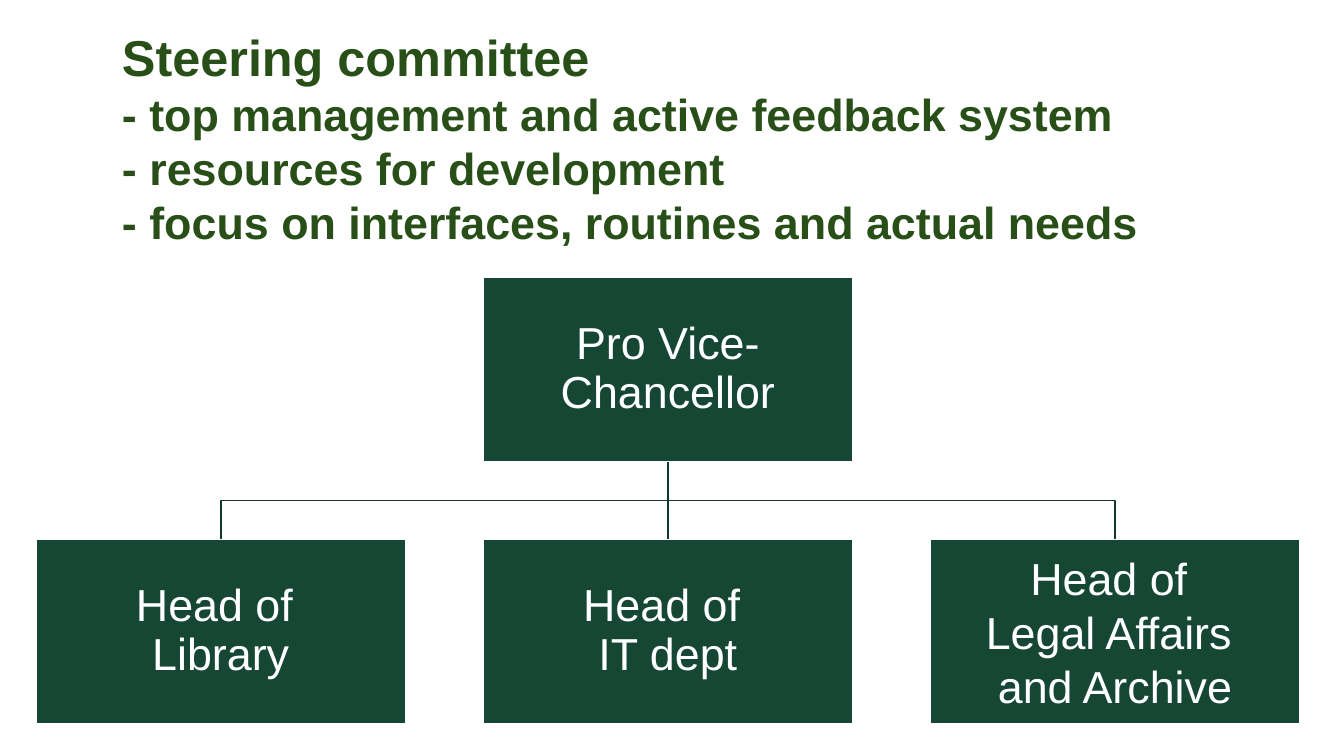
from dataclasses import dataclass

from lxml import etree
from pptx import Presentation
from pptx.dml.color import RGBColor
from pptx.enum.shapes import MSO_CONNECTOR, MSO_SHAPE
from pptx.enum.text import MSO_ANCHOR, MSO_AUTO_SIZE, PP_ALIGN
from pptx.oxml.ns import qn
from pptx.util import Inches, Pt

RECTANGLE = MSO_SHAPE.RECTANGLE
STRAIGHT = MSO_CONNECTOR.STRAIGHT
TOP, MIDDLE = MSO_ANCHOR.TOP, MSO_ANCHOR.MIDDLE
LEFT, CENTER = PP_ALIGN.LEFT, PP_ALIGN.CENTER
NO_AUTOFIT = MSO_AUTO_SIZE.NONE
TITLE_ONLY = 5


@dataclass(frozen=True)
class Theme:
    """Colours, font and type sizes of the slide."""

    heading: RGBColor = RGBColor(0x28, 0x4F, 0x18)
    role_fill: RGBColor = RGBColor(0x15, 0x47, 0x34)
    branch: RGBColor = RGBColor(0x11, 0x39, 0x2A)
    white: RGBColor = RGBColor(0xFF, 0xFF, 0xFF)
    font: str = "Arial"
    heading_size: int = 36
    body_size: int = 32
    line_width: int = 1


THEME = Theme()

HEADING = [
    "Steering committee",
    "- top management and active feedback system",
    "- resources for development",
    "- focus on interfaces, routines and actual needs",
]
CHAIR = (["Pro Vice-Chancellor"], 0.9)
MEMBERS = [
    (["Head of ", "Library"], 0.9),
    (["Head of ", "IT dept"], 0.9),
    (["Head of ", "Legal Affairs ", "and Archive"], 1.0),
]


def apply(target, values):
    """Set each attribute of the target from a dict."""
    for name, value in values.items():
        setattr(target, name, value)


def write_lines(frame, lines, sizes, color, bold, spacing, align, anchor, inset):
    """Fill a text frame with one paragraph for each line."""
    margins = ("margin_left", "margin_top", "margin_right", "margin_bottom")
    apply(frame, dict.fromkeys(margins, Inches(inset)))
    apply(frame, {"word_wrap": True, "auto_size": NO_AUTOFIT, "vertical_anchor": anchor})
    for index, (line, size) in enumerate(zip(lines, sizes)):
        paragraph = frame.add_paragraph() if index else frame.paragraphs[0]
        apply(paragraph, {"alignment": align, "line_spacing": spacing})
        run = paragraph.add_run()
        run.text = line
        apply(run.font, {"name": THEME.font, "size": Pt(size), "bold": bold})
        run.font.color.rgb = color


def add_heading(slide, left, top, width, height):
    """Place the title with its supporting points."""
    title = slide.shapes.title
    apply(title, {"left": Inches(left), "top": Inches(top),
                  "width": Inches(width), "height": Inches(height)})
    sizes = [THEME.heading_size] + [THEME.body_size] * (len(HEADING) - 1)
    write_lines(title.text_frame, HEADING, sizes, THEME.heading, True, 1.0, LEFT, TOP, 0)


def style_line(line, color):
    """Give an outline its colour and width."""
    line.color.rgb = color
    line.width = Pt(THEME.line_width)


def add_branch(slide, start_x, start_y, end_x, end_y):
    """Link the chair to a member, straight down or by an elbow."""
    if start_x == end_x:
        branch = slide.shapes.add_connector(
            STRAIGHT, Inches(start_x), Inches(start_y), Inches(end_x), Inches(end_y))
        etree.SubElement(branch.element.spPr, qn("a:effectLst"))
    else:
        bend_y = (start_y + end_y) / 2
        builder = slide.shapes.build_freeform(Inches(start_x), Inches(start_y))
        corners = [(start_x, bend_y), (end_x, bend_y), (end_x, end_y)]
        builder.add_line_segments([(Inches(x), Inches(y)) for x, y in corners], close=False)
        branch = builder.convert_to_shape()
        branch.shadow.inherit = False
        branch.fill.background()
    style_line(branch.line, THEME.branch)


def add_role(slide, left, top, width, height, role):
    """Draw one role box with its centred label."""
    lines, spacing = role
    box = slide.shapes.add_shape(
        RECTANGLE, Inches(left), Inches(top), Inches(width), Inches(height))
    box.shadow.inherit = False
    box.fill.solid()
    box.fill.fore_color.rgb = THEME.role_fill
    style_line(box.line, THEME.white)
    write_lines(box.text_frame, lines, [THEME.body_size] * len(lines),
                THEME.white, False, spacing, CENTER, MIDDLE, 0.02)


def add_committee_chart(slide, left, top, width, height):
    """Draw the chair above an evenly spaced row of members."""
    role_width, role_height = 3.66, 1.83
    step = (width - role_width) / (len(MEMBERS) - 1)
    member_top = top + height - role_height
    chair_center = left + width / 2
    member_centers = [chair_center + step * (index - (len(MEMBERS) - 1) / 2)
                      for index in range(len(MEMBERS))]
    for center in member_centers:
        add_branch(slide, chair_center, top + role_height, center, member_top)
    add_role(slide, chair_center - role_width / 2, top, role_width, role_height, CHAIR)
    for center, member in zip(member_centers, MEMBERS):
        add_role(slide, center - role_width / 2, member_top, role_width, role_height, member)


def main():
    """Build and save the slide."""
    presentation = Presentation()
    apply(presentation, {"slide_width": Inches(13.33), "slide_height": Inches(7.5)})
    slide = presentation.slides.add_slide(presentation.slide_layouts[TITLE_ONLY])
    add_heading(slide, 1.21, 0.26, 11, 2.3)
    add_committee_chart(slide, 0.36, 2.75, 12.53, 4.43)
    presentation.save("out.pptx")


if __name__ == "__main__":
    main()
